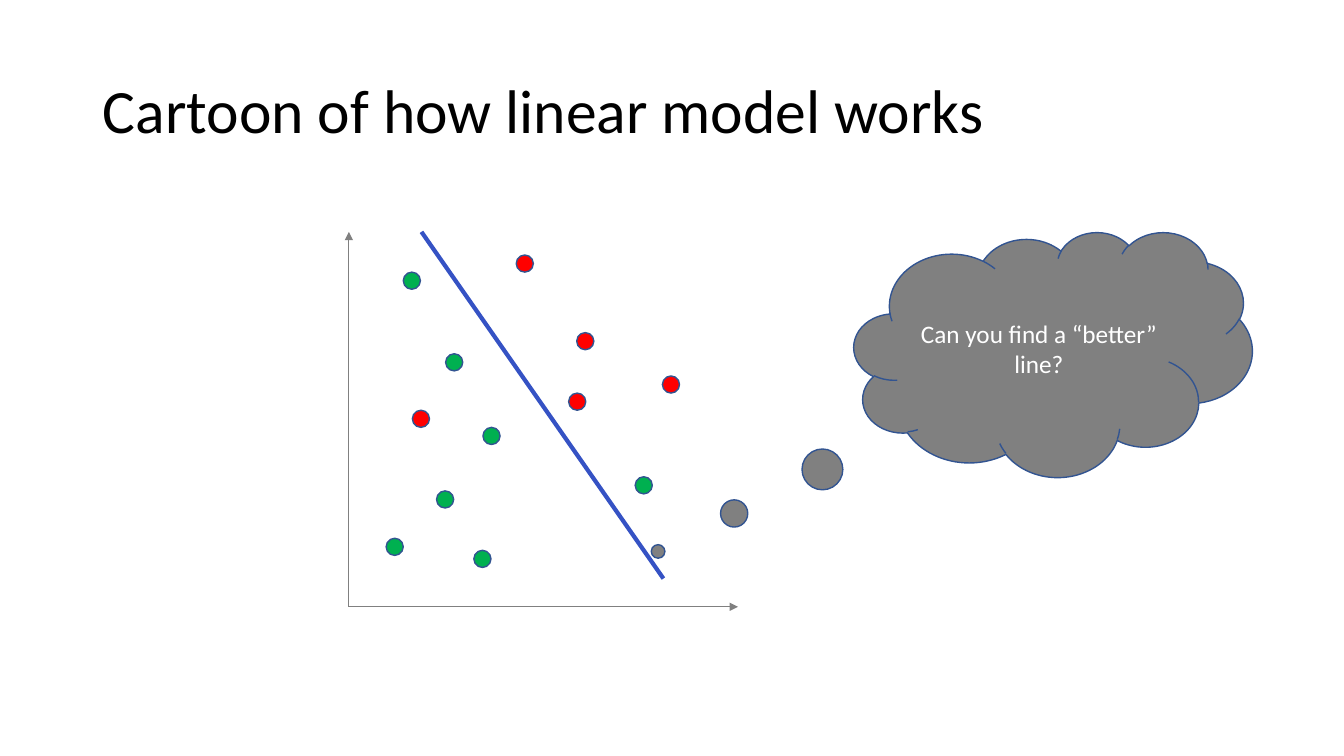
import pptx
import pptx.util
import pptx.dml.color
import pptx.enum.shapes
import pptx.enum.text
import pptx.oxml
import pptx.oxml.ns

Inches = pptx.util.Inches
Pt = pptx.util.Pt
SHAPE = pptx.enum.shapes.MSO_SHAPE
ALIGN = pptx.enum.text.PP_ALIGN
COLORS = {
    "title": "000000", "axis": "808080", "boundary": "3552C4", "outline": "325491",
    "green": "00B050", "red": "FF0000", "cloud": "808080", "cloud text": "FFFFFF",
}


def rgb(name):
    return pptx.dml.color.RGBColor.from_string(COLORS[name])


def style_shape(shape, fill):
    shape.shadow.inherit = False
    shape.fill.solid()
    shape.fill.fore_color.rgb = rgb(fill)
    shape.line.color.rgb = rgb("outline")
    shape.line.width = Pt(1)


deck = pptx.Presentation()
deck.slide_width, deck.slide_height = Inches(13.33), Inches(7.5)
slide = deck.slides.add_slide(deck.slide_layouts[5])

# Title
title = slide.shapes.title
title.left, title.top = Inches(0.92), Inches(0.4)
title.width, title.height = Inches(11.5), Inches(1.45)
title.text_frame.text = "Cartoon of how linear model works"

# Axes and decision boundary: start, end, colour, width, arrowhead
origin = (3.46, 6.02)
lines = [
    (origin, (3.46, 2.3), "axis", 0.5, True),
    (origin, (7.32, 6.02), "axis", 0.5, True),
    ((4.18, 2.3), (6.58, 5.74), "boundary", 3, False),
]
for start, end, color, width, has_arrow in lines:
    line = slide.shapes.add_connector(
        pptx.enum.shapes.MSO_CONNECTOR.STRAIGHT, *map(Inches, start + end))
    line.line.color.rgb = rgb(color)
    line.line.width = Pt(width)
    if has_arrow:
        arrowhead = pptx.oxml.parse_xml(
            f'<a:tailEnd {pptx.oxml.ns.nsdecls("a")} type="triangle"/>')
        line.line._get_or_add_ln().append(arrowhead)
    line._element.spPr.append(
        pptx.oxml.parse_xml(f'<a:effectLst {pptx.oxml.ns.nsdecls("a")}/>'))

# Data points of the two classes
DOT_SIZE = Inches(0.17)
points = {
    "green": [(4, 2.7), (4.33, 4.87), (3.83, 5.34), (6.3, 4.73),
              (4.42, 3.51), (4.79, 4.24), (4.7, 5.46)],
    "red": [(5.72, 3.3), (4.09, 4.07), (5.64, 3.9), (5.12, 2.53), (6.57, 3.73)],
}
scatter = slide.shapes.add_group_shape()
for label, positions in points.items():
    for x, y in positions:
        dot = scatter.shapes.add_shape(SHAPE.OVAL, Inches(x), Inches(y), DOT_SIZE, DOT_SIZE)
        style_shape(dot, label)

# Thought cloud pointing at the boundary
cloud = slide.shapes.add_shape(
    SHAPE.CLOUD_CALLOUT, Inches(8.47), Inches(2.3), Inches(3.95), Inches(2.43))
cloud.adjustments[0], cloud.adjustments[1] = -0.992, 0.805
style_shape(cloud, "cloud")
cloud.text_frame.text = "Can you find a “better” line?"

# Text formats
text_formats = [
    (title, {"size": Pt(44), "name": "Calibri"}, "title",
     {"alignment": ALIGN.LEFT, "line_spacing": 0.9}),
    (cloud, {"size": Pt(18), "name": "Calibri"}, "cloud text",
     {"alignment": ALIGN.CENTER}),
]
for holder, font_format, color, paragraph_format in text_formats:
    holder.text_frame.vertical_anchor = pptx.enum.text.MSO_ANCHOR.MIDDLE
    holder.text_frame.word_wrap = True
    paragraph = holder.text_frame.paragraphs[0]
    for attribute, value in paragraph_format.items():
        setattr(paragraph, attribute, value)
    font = paragraph.runs[0].font
    for attribute, value in font_format.items():
        setattr(font, attribute, value)
    font.color.rgb = rgb(color)

deck.save("out.pptx")
